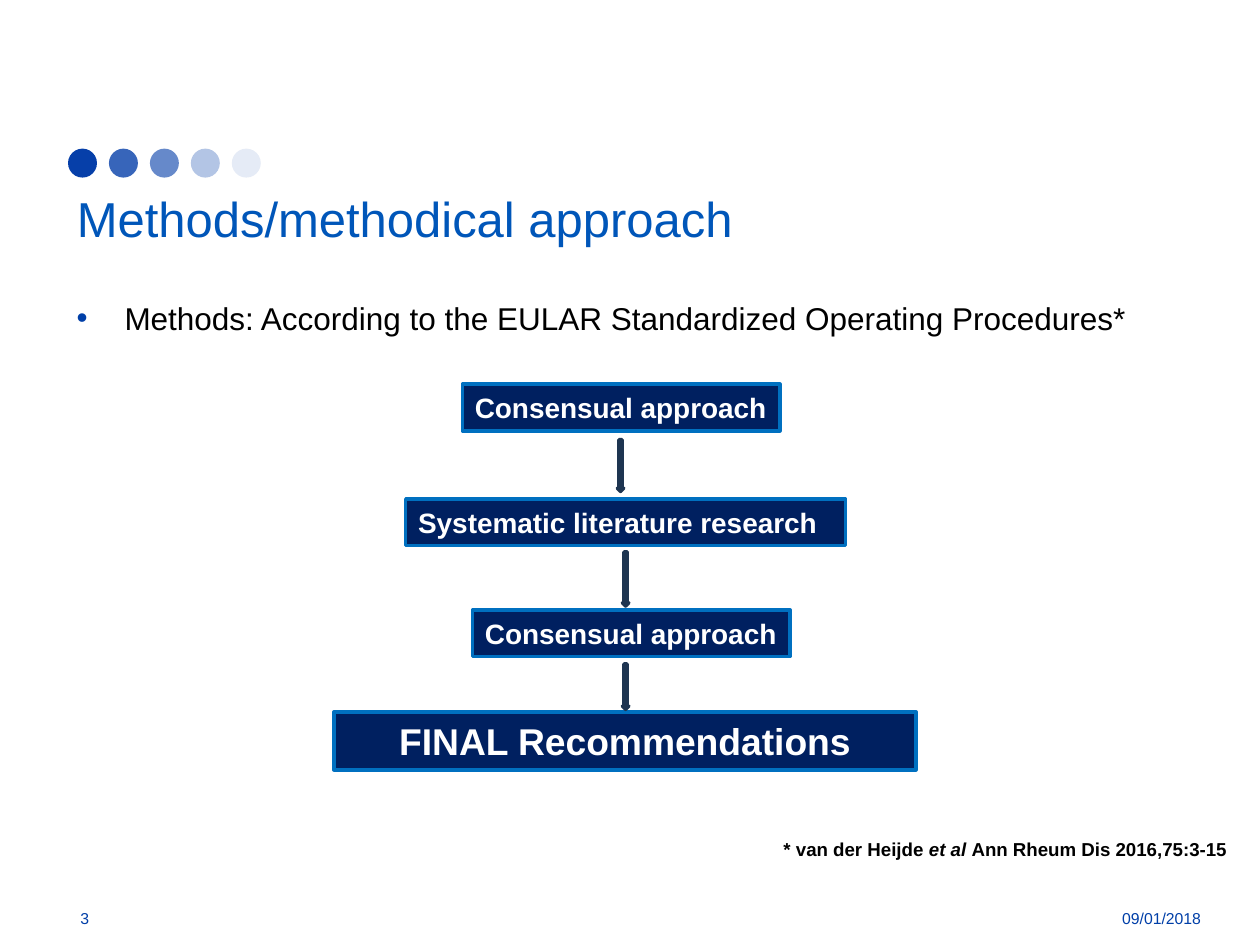
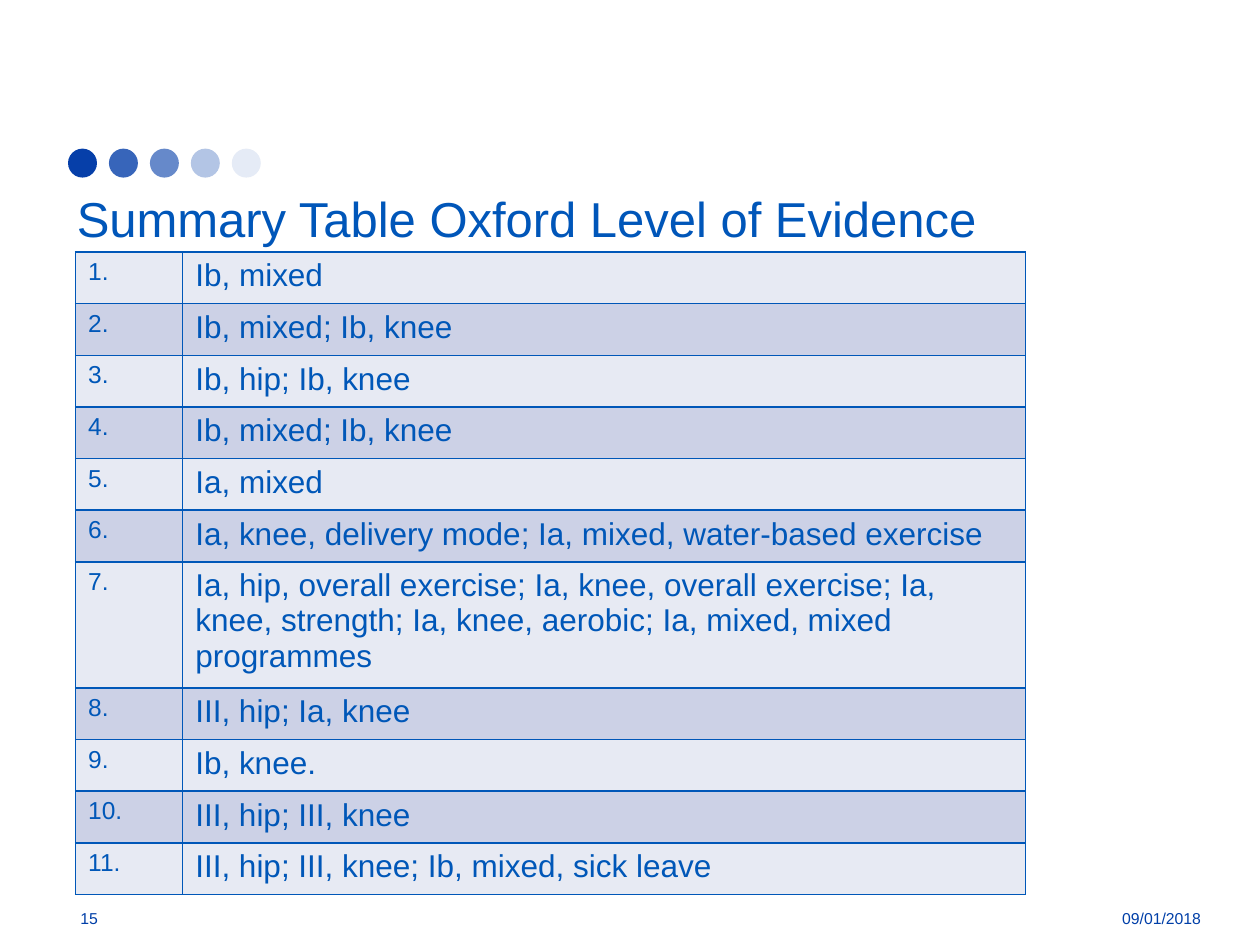
from pptx import Presentation
from pptx.dml.color import RGBColor
from pptx.enum.shapes import MSO_SHAPE as Shape
from pptx.enum.text import MSO_ANCHOR as Anchor, PP_ALIGN as Align
from pptx.oxml.ns import qn
from pptx.util import Inches, Pt
from lxml.etree import SubElement as Sub

FONT = "Arial"
COLORS = {
    "title": "0056B9", "foot": "003FA8", "dot": "063FA9", "text": "000000",
    "box": "002060", "edge": "0070C0", "light": "FFFFFF",
    "arrow": "28476D", "rim": "1E3551",
    "table": "0057B8", "odd": "E7EAF3", "even": "CCD1E6",
}
DATE = "09/01/2018"
DOTS = [100, 80, 61, 30, 10]  # opacity in percent

STEPS = [  # left, top, width, height, text, size, alignment
    (3.67, 3.05, 2.52, 0.37, "Consensual approach", 16, Align.LEFT),
    (3.22, 3.96, 3.49, 0.37, "Systematic literature research", 16, Align.LEFT),
    (3.75, 4.84, 2.52, 0.37, "Consensual approach", 16, Align.LEFT),
    (2.65, 5.65, 4.62, 0.46, "FINAL Recommendations", 21.3, Align.CENTER),
]
ARROWS = [(4.9, 3.49, 0.41), (4.94, 4.38, 0.43), (4.94, 5.27, 0.36)]

LEVELS = [
    "Ib, mixed",
    "Ib, mixed; Ib, knee",
    "Ib, hip; Ib, knee",
    "Ib, mixed; Ib, knee",
    "Ia, mixed",
    "Ia, knee, delivery mode; Ia, mixed, water-based exercise",
    "Ia, hip, overall exercise; Ia, knee, overall exercise; Ia, knee, "
    "strength; Ia, knee, aerobic; Ia, mixed, mixed\nprogrammes",
    "III, hip; Ia, knee",
    "Ib, knee.",
    "III, hip; III, knee",
    "III, hip; III, knee; Ib, mixed, sick leave",
]


def rgb(name):
    return RGBColor.from_string(COLORS[name])


def style(frame, size, color, bold=False, align=Align.LEFT):
    """Format every run of a text frame alike."""
    for para in frame.paragraphs:
        para.alignment = align
        for run in para.runs:
            font = run.font
            font.name, font.size, font.bold = FONT, Pt(size), bold
            font.color.rgb = rgb(color)


def add_form(slide, kind, at, fill, line=None):
    form = slide.shapes.add_shape(kind, *map(Inches, at))
    form.shadow.inherit = False
    form.fill.solid()
    form.fill.fore_color.rgb = rgb(fill)
    if line:
        form.line.color.rgb = rgb(line)
        form.line.width = Pt(2)
    else:
        form.line.fill.background()
    return form


def add_text(slide, at, text, size, color, **look):
    frame = slide.shapes.add_textbox(*map(Inches, at)).text_frame
    frame.word_wrap = True
    frame.text = text
    style(frame, size, color, **look)
    return frame


def add_dots(slide):
    for i, alpha in enumerate(DOTS):
        dot = add_form(slide, Shape.OVAL,
                       (0.54 + 0.325 * i, 1.18, 0.23, 0.23), "dot")
        tint = dot.fill._xPr.find(".//" + qn("a:srgbClr"))
        if alpha < 100:
            Sub(tint, qn("a:alpha"), val=str(alpha * 1000))


def add_foot(slide, number):
    for at, text, align in [
        ((0.54, 7.09, 0.96, 0.4), str(number), Align.LEFT),
        ((8.29, 7.09, 1.34, 0.4), DATE, Align.RIGHT),
    ]:
        frame = add_text(slide, at, text, 9, "foot", align=align)
        frame.vertical_anchor = Anchor.MIDDLE


def add_page(deck, title, number):
    slide = deck.slides.add_slide(deck.slide_layouts[5])
    add_dots(slide)
    head = slide.shapes.title
    head.left, head.top, head.width, head.height = map(
        Inches, (0.51, 1.42, 9.11, 0.69))
    frame = head.text_frame
    frame.text = title
    frame.vertical_anchor = Anchor.MIDDLE
    frame.margin_bottom = Inches(0.12)
    style(frame, 28, "title")
    add_foot(slide, number)
    return slide


def add_bullet(slide, at, text):
    frame = add_text(slide, at, text, 18, "text")
    frame.margin_top = Inches(0.08)
    props = frame.paragraphs[0]._p.get_or_add_pPr()
    indent = Inches(0.38)
    props.set("marL", str(indent))
    props.set("indent", str(-indent))
    Sub(Sub(props, qn("a:buClr")), qn("a:srgbClr"), val=COLORS["foot"])
    Sub(props, qn("a:buFont"), typeface=FONT)
    Sub(props, qn("a:buChar"), char="•")


def add_step(slide, left, top, width, height, text, size, align):
    box = add_form(slide, Shape.RECTANGLE, (left, top, width, height),
                   "box", "edge")
    frame = box.text_frame
    frame.text = text
    frame.vertical_anchor = Anchor.MIDDLE
    if align == Align.LEFT:
        frame.margin_right = 0
    style(frame, size, "light", bold=True, align=align)


def add_cite(slide, at, parts):
    """Add a bold reference whose middle part is in italics."""
    frame = add_text(slide, at, "", 10.7, "text")
    frame.margin_right = 0
    for i, part in enumerate(parts):
        run = frame.paragraphs[0].add_run()
        run.text = part
        run.font.italic = i == 1
    style(frame, 10.7, "text", bold=True)


def add_edges(cell):
    props = cell._tc.get_or_add_tcPr()
    for i, side in enumerate(("lnL", "lnR", "lnT", "lnB")):
        line = props.makeelement(qn("a:" + side), {"w": str(Pt(1))})
        fill = Sub(line, qn("a:solidFill"))
        Sub(fill, qn("a:srgbClr"), val=COLORS["table"])
        props.insert(i, line)


def add_levels(slide):
    rows = len(LEVELS)
    table = slide.shapes.add_table(
        rows, 2, *map(Inches, (0.6, 2, 7.54, 0.41 * rows))).table
    table.first_row = table.horz_banding = False
    table.columns[0].width = Inches(0.85)
    table.columns[1].width = Inches(6.69)
    for i, level in enumerate(LEVELS):
        for j, (text, size) in enumerate([(f"{i + 1}.", 14), (level, 18)]):
            cell = table.cell(i, j)
            cell.text_frame.text = text
            style(cell.text_frame, size, "table")
            cell.fill.solid()
            cell.fill.fore_color.rgb = rgb("even" if i % 2 else "odd")
            add_edges(cell)


def main():
    deck = Presentation()
    deck.slide_width, deck.slide_height = Inches(10), Inches(7.5)

    page = add_page(deck, "Methods/methodical approach", 3)
    add_bullet(page, (0.51, 2.29, 9.11, 0.5), "Methods: According to the "
               "EULAR Standardized Operating Procedures*")
    for step in STEPS:
        add_step(page, *step)
    for left, top, height in ARROWS:
        add_form(page, Shape.DOWN_ARROW, (left, top, 0.05, height),
                 "arrow", "rim")
    add_cite(page, (6.12, 6.6, 3.76, 0.28),
             ["* van der Heijde ", "et al ", "Ann Rheum Dis 2016,75:3-15"])

    page = add_page(deck, "Summary Table Oxford Level of Evidence", 15)
    add_levels(page)

    deck.save("out.pptx")


if __name__ == "__main__":
    main()
